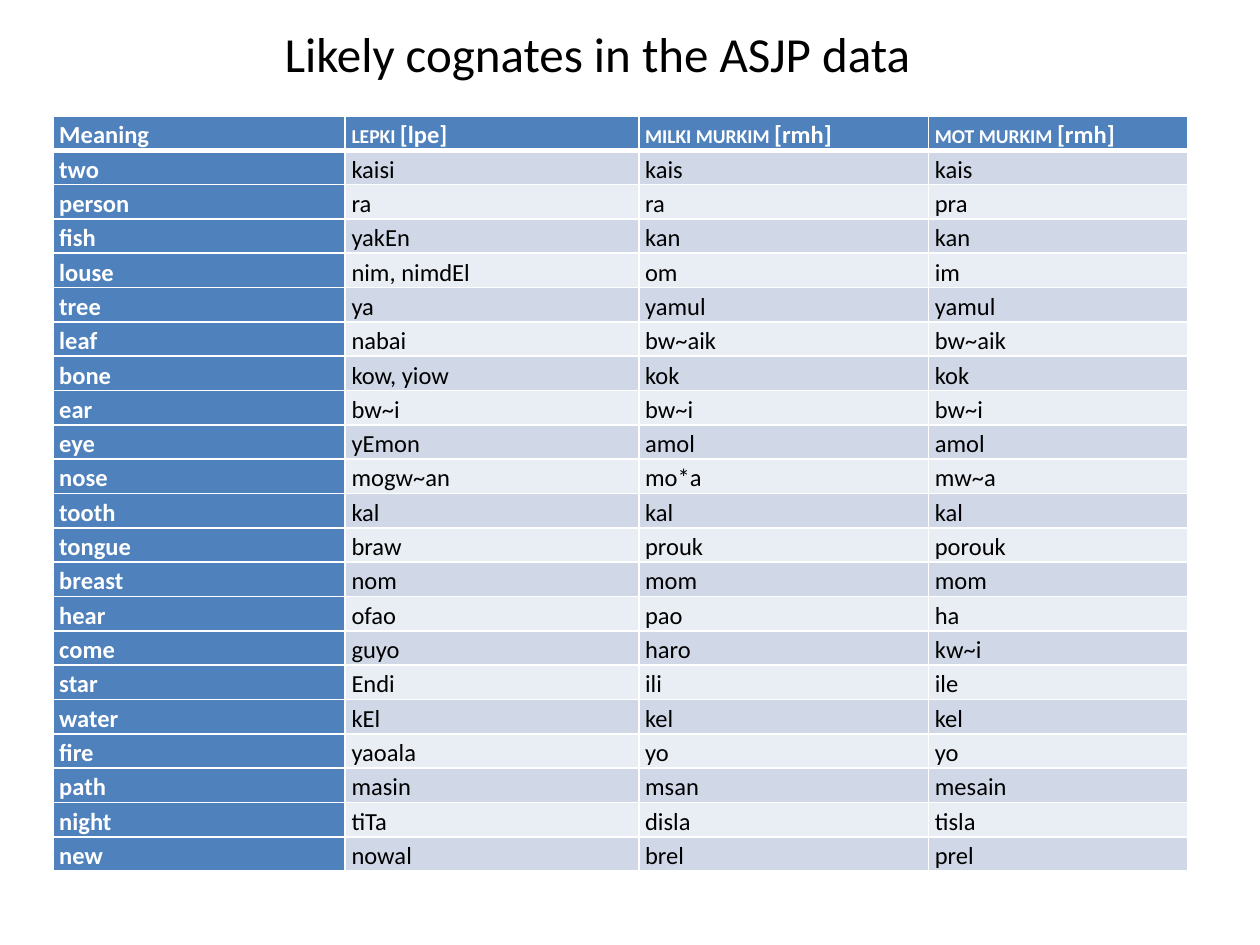
from dataclasses import dataclass

from lxml import etree
from pptx import Presentation
from pptx.dml.color import RGBColor
from pptx.enum.text import MSO_AUTO_SIZE
from pptx.oxml.ns import qn
from pptx.util import Inches, Pt

FIT = MSO_AUTO_SIZE.SHAPE_TO_FIT_TEXT
FONT = "Calibri"
WHITE, BLACK, BLUE = "FFFFFF", "000000", "4F81BD"
BANDS = ("D0D8E8", "E9EDF4")
WIDTHS = (2.32, 2.33, 2.3, 2.06)
ROW_H = 0.27


@dataclass
class Part:
    text: str
    small: bool = False


@dataclass
class Look:
    fill: str
    ink: str
    bold: bool
    top: int = 1
    base: int = 1


HEADS = (
    [Part("Meaning")],
    [Part("lepki ", True), Part("[lpe]")],
    [Part("milki murkim ", True), Part("[rmh]")],
    [Part("mot murkim ", True), Part("[rmh]")],
)
WORDS = (
    ("two", "kaisi", "kais", "kais"),
    ("person", "ra", "ra", "pra"),
    ("fish", "yakEn", "kan", "kan"),
    ("louse", "nim, nimdEl", "om", "im"),
    ("tree", "ya", "yamul", "yamul"),
    ("leaf", "nabai", "bw~aik", "bw~aik"),
    ("bone", "kow, yiow", "kok", "kok"),
    ("ear", "bw~i", "bw~i", "bw~i"),
    ("eye", "yEmon", "amol", "amol"),
    ("nose", "mogw~an", "mo*a", "mw~a"),
    ("tooth", "kal", "kal", "kal"),
    ("tongue", "braw", "prouk", "porouk"),
    ("breast", "nom", "mom", "mom"),
    ("hear", "ofao", "pao", "ha"),
    ("come", "guyo", "haro", "kw~i"),
    ("star", "Endi", "ili", "ile"),
    ("water", "kEl", "kel", "kel"),
    ("fire", "yaoala", "yo", "yo"),
    ("path", "masin", "msan", "mesain"),
    ("night", "tiTa", "disla", "tisla"),
    ("new", "nowal", "brel", "prel"),
)


def paint(color, code: str) -> None:
    color.rgb = RGBColor.from_string(code)


def add_run(para, part: Part, size: int, ink: str, bold: bool = False) -> None:
    run = para.add_run()
    run.text = part.text
    font = run.font
    font.name, font.size, font.bold = FONT, Pt(size), bold
    paint(font.color, ink)
    if part.small:
        run._r.get_or_add_rPr().set("cap", "small")


def add_edge(cell, side: str, width: int) -> None:
    props = cell._tc.get_or_add_tcPr()
    line = etree.SubElement(props, qn(f"a:ln{side}"), w=str(Pt(width)))
    fill = etree.SubElement(line, qn("a:solidFill"))
    etree.SubElement(fill, qn("a:srgbClr"), val=WHITE)


def fill_cell(cell, parts: list[Part], look: Look) -> None:
    cell.margin_left = cell.margin_right = Inches(0.05)
    cell.margin_top = cell.margin_bottom = Inches(0)
    # Borders come before the fill in the cell properties
    for side, width in (("L", 1), ("R", 1), ("T", look.top), ("B", look.base)):
        add_edge(cell, side, width)
    cell.fill.solid()
    paint(cell.fill.fore_color, look.fill)
    para = cell.text_frame.paragraphs[0]
    para.line_spacing = 1.15
    for part in parts:
        add_run(para, part, 14, look.ink, look.bold)


def add_words(slide) -> None:
    count = len(WORDS) + 1
    table = slide.shapes.add_table(
        count, len(WIDTHS), Inches(0.42), Inches(0.92),
        Inches(sum(WIDTHS)), Inches(count * ROW_H)).table
    for col, width in zip(table.columns, WIDTHS):
        col.width = Inches(width)
    for row in table.rows:
        row.height = Inches(ROW_H)

    # Header row
    for c, parts in enumerate(HEADS):
        fill_cell(table.cell(0, c), parts, Look(BLUE, WHITE, True, base=3))

    # Banded rows, with the meaning in blue
    for r, words in enumerate(WORDS, 1):
        top = 3 if r == 1 else 1
        for c, word in enumerate(words):
            if c == 0:
                look = Look(BLUE, WHITE, True, top)
            else:
                look = Look(BANDS[(r - 1) % 2], BLACK, False, top)
            fill_cell(table.cell(r, c), [Part(word)], look)


def add_title(slide) -> None:
    box = slide.shapes.add_textbox(
        Inches(2.16), Inches(0.14), Inches(5.22), Inches(0.57))
    frame = box.text_frame
    frame.word_wrap = False
    frame.auto_size = FIT
    add_run(frame.paragraphs[0], Part("Likely cognates in the ASJP data"), 28, BLACK)


def main() -> None:
    deck = Presentation()
    deck.slide_width, deck.slide_height = Inches(10), Inches(7.5)
    slide = deck.slides.add_slide(deck.slide_layouts[6])
    add_words(slide)
    add_title(slide)
    deck.save("out.pptx")


if __name__ == "__main__":
    main()
